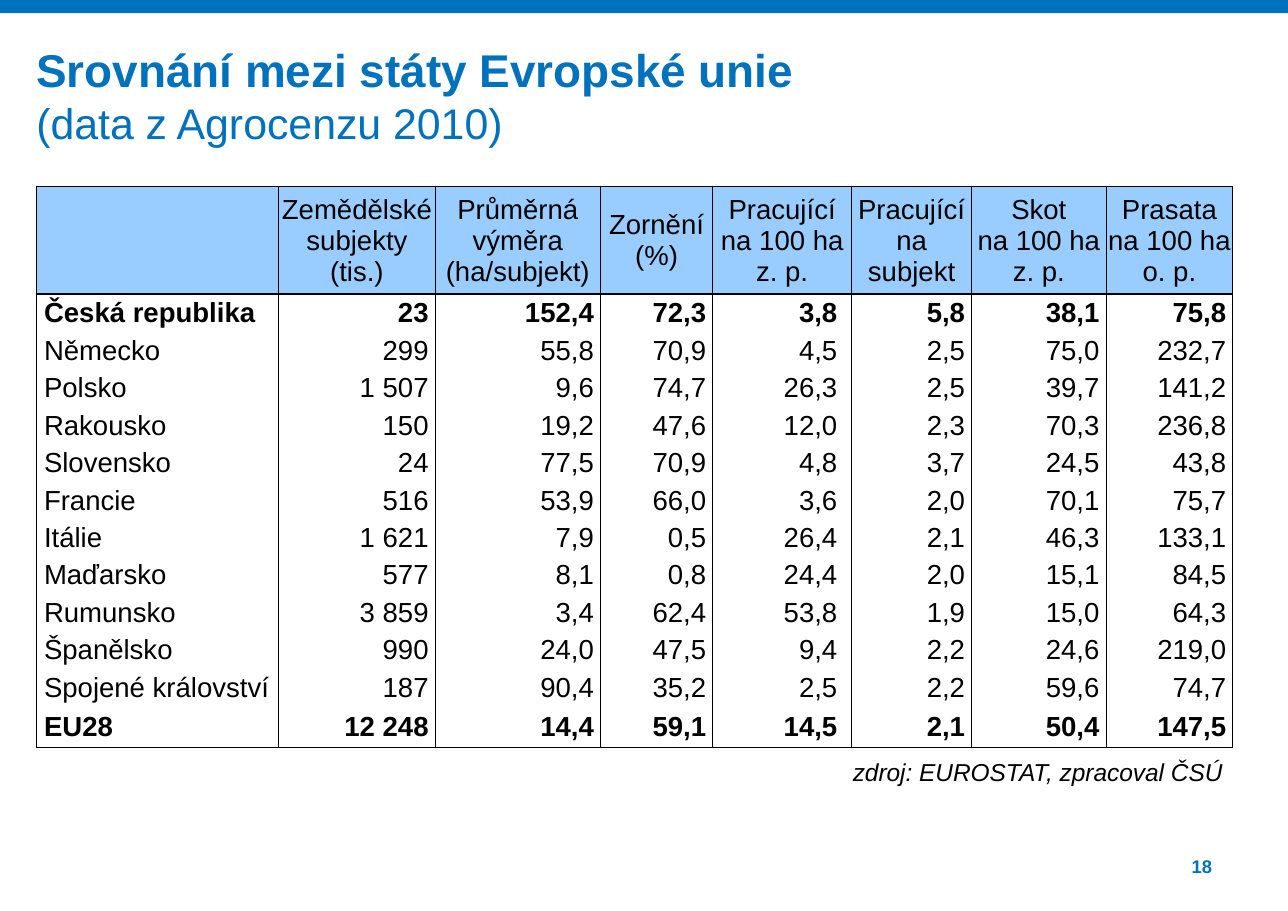
"""Builds a slide comparing agriculture across European Union states."""
import dataclasses
import typing

import lxml.etree
import pptx
import pptx.dml.color
import pptx.enum.shapes
import pptx.enum.text
import pptx.oxml.ns
import pptx.util

PX = 9144
ALIGN = pptx.enum.text.PP_ALIGN
MIDDLE = pptx.enum.text.MSO_ANCHOR.MIDDLE


@dataclasses.dataclass(frozen=True)
class Theme:
    font: str = "Arial"
    blue: str = "0071BC"
    header: str = "99CCFF"
    black: str = "000000"
    title: int = 30
    subtitle: int = 28
    table: int = 18
    source: int = 16
    number: int = 12
    thick: float = 1
    thin: float = 0.5


THEME = Theme()


class Line(typing.NamedTuple):
    text: str
    size: int
    color: str
    bold: bool = False
    italic: bool = False
    align: typing.Any = ALIGN.LEFT


class TextBox(typing.NamedTuple):
    box: tuple[int, int, int, int]
    lines: list[Line]
    wrap: bool = True
    anchor: typing.Any = pptx.enum.text.MSO_ANCHOR.TOP


class Column(typing.NamedTuple):
    header: str
    width: int
    left: int = 1
    right: int = 6
    align: typing.Any = ALIGN.RIGHT


class Country(typing.NamedTuple):
    name: str
    values: str
    bold: bool = False


TEXTS = [
    TextBox((33, 38, 1136, 98), [
        Line("Srovnání mezi státy Evropské unie", THEME.title, THEME.blue, bold=True),
        Line("(data z Agrocenzu 2010)", THEME.subtitle, THEME.blue)]),
    TextBox((774, 681, 346, 39), [
        Line("zdroj: EUROSTAT, zpracoval ČSÚ", THEME.source, THEME.black, italic=True)],
        wrap=False, anchor=MIDDLE),
    TextBox((1022, 776, 78, 21), [
        Line("18", THEME.number, THEME.blue, bold=True, align=ALIGN.RIGHT)]),
]

COLUMNS = [
    Column("", 220, left=7, right=1, align=ALIGN.LEFT),
    Column("Zemědělské subjekty\n(tis.)", 142),
    Column("Průměrná výměra\n(ha/subjekt)", 150),
    Column("Zornění\n(%)", 102),
    Column("Pracující\nna 100 ha z. p.", 126, right=13),
    Column("Pracující\nna subjekt", 109),
    Column("Skot\nna 100 ha z. p.", 122),
    Column("Prasata\nna 100 ha o. p.", 115),
]

COUNTRIES = [
    Country("Česká republika", "23|152,4|72,3|3,8|5,8|38,1|75,8", bold=True),
    Country("Německo", "299|55,8|70,9|4,5|2,5|75,0|232,7"),
    Country("Polsko", "1 507|9,6|74,7|26,3|2,5|39,7|141,2"),
    Country("Rakousko", "150|19,2|47,6|12,0|2,3|70,3|236,8"),
    Country("Slovensko", "24|77,5|70,9|4,8|3,7|24,5|43,8"),
    Country("Francie", "516|53,9|66,0|3,6|2,0|70,1|75,7"),
    Country("Itálie", "1 621|7,9|0,5|26,4|2,1|46,3|133,1"),
    Country("Maďarsko", "577|8,1|0,8|24,4|2,0|15,1|84,5"),
    Country("Rumunsko", "3 859|3,4|62,4|53,8|1,9|15,0|64,3"),
    Country("Španělsko", "990|24,0|47,5|9,4|2,2|24,6|219,0"),
    Country("Spojené království", "187|90,4|35,2|2,5|2,2|59,6|74,7"),
    Country("EU28", "12 248|14,4|59,1|14,5|2,1|50,4|147,5", bold=True),
]

TABLE_LEFT, TABLE_TOP = 33, 169
ROW_HEIGHTS = [98] + [34] * (len(COUNTRIES) - 1) + [38]


def rgb(color: str) -> pptx.dml.color.RGBColor:
    return pptx.dml.color.RGBColor.from_string(color)


def write_line(p: typing.Any, line: Line) -> None:
    p.text = line.text
    p.alignment = line.align
    for r in p.runs:
        formats = {"name": THEME.font, "size": pptx.util.Pt(line.size),
                   "bold": line.bold, "italic": line.italic}
        for name, value in formats.items():
            setattr(r.font, name, value)
        r.font.color.rgb = rgb(line.color)


def add_text(slide: typing.Any, text: TextBox) -> None:
    tf = slide.shapes.add_textbox(*(v * PX for v in text.box)).text_frame
    formats = {"margin_left": 0, "margin_top": 0, "margin_right": 0, "margin_bottom": 0,
               "word_wrap": text.wrap, "vertical_anchor": text.anchor}
    for name, value in formats.items():
        setattr(tf, name, value)
    for i, line in enumerate(text.lines):
        write_line(tf.add_paragraph() if i else tf.paragraphs[0], line)


def add_border(cell: typing.Any, side: str, width: float) -> None:
    qn = pptx.oxml.ns.qn
    ln = lxml.etree.SubElement(cell._tc.get_or_add_tcPr(), qn(f"a:ln{side}"),
                               w=str(int(pptx.util.Pt(width))))
    if width:
        fill = lxml.etree.SubElement(ln, qn("a:solidFill"))
        lxml.etree.SubElement(fill, qn("a:srgbClr"), val=THEME.black)
    else:
        lxml.etree.SubElement(ln, qn("a:noFill"))


def column_edge(c: int) -> float:
    return THEME.thick if c in (0, 1, len(COLUMNS)) else THEME.thin


def row_edge(r: int) -> float:
    return THEME.thick if r in (0, 1, len(ROW_HEIGHTS)) else 0


def add_table(slide: typing.Any) -> None:
    size = sum(col.width for col in COLUMNS), sum(ROW_HEIGHTS)
    box = (v * PX for v in (TABLE_LEFT, TABLE_TOP, *size))
    table = slide.shapes.add_table(len(ROW_HEIGHTS), len(COLUMNS), *box).table
    table.first_row = table.horz_banding = False
    for row, height in zip(table.rows, ROW_HEIGHTS):
        row.height = height * PX
    texts = [[col.header for col in COLUMNS]]
    texts += [[country.name, *country.values.split("|")] for country in COUNTRIES]
    for c, col in enumerate(COLUMNS):
        table.columns[c].width = col.width * PX
        for r, row_texts in enumerate(texts):
            cell = table.cell(r, c)
            head = r == 0
            formats = {"margin_left": PX if head else col.left * PX, "margin_top": PX,
                       "margin_right": PX if head else col.right * PX,
                       "margin_bottom": 0, "vertical_anchor": MIDDLE}
            for name, value in formats.items():
                setattr(cell, name, value)
            edges = {"L": column_edge(c), "R": column_edge(c + 1),
                     "T": row_edge(r), "B": row_edge(r + 1)}
            for side, width in edges.items():
                add_border(cell, side, width)
            if head:
                cell.fill.solid()
                cell.fill.fore_color.rgb = rgb(THEME.header)
            else:
                cell.fill.background()
            write_line(cell.text_frame.paragraphs[0], Line(
                row_texts[c], THEME.table, THEME.black,
                bold=not head and COUNTRIES[r - 1].bold,
                align=ALIGN.CENTER if head else col.align))


def main() -> None:
    prs = pptx.Presentation()
    prs.slide_width, prs.slide_height = 1169 * PX, 827 * PX
    s = prs.slides.add_slide(prs.slide_layouts[6])
    sp = s.shapes.add_shape(pptx.enum.shapes.MSO_SHAPE.RECTANGLE, 0, 0, 1169 * PX, 12 * PX)
    sp.shadow.inherit = False
    sp.fill.solid()
    sp.fill.fore_color.rgb = rgb(THEME.blue)
    sp.line.fill.background()
    add_table(s)
    for text in TEXTS:
        add_text(s, text)
    prs.save("out.pptx")


if __name__ == "__main__":
    main()
